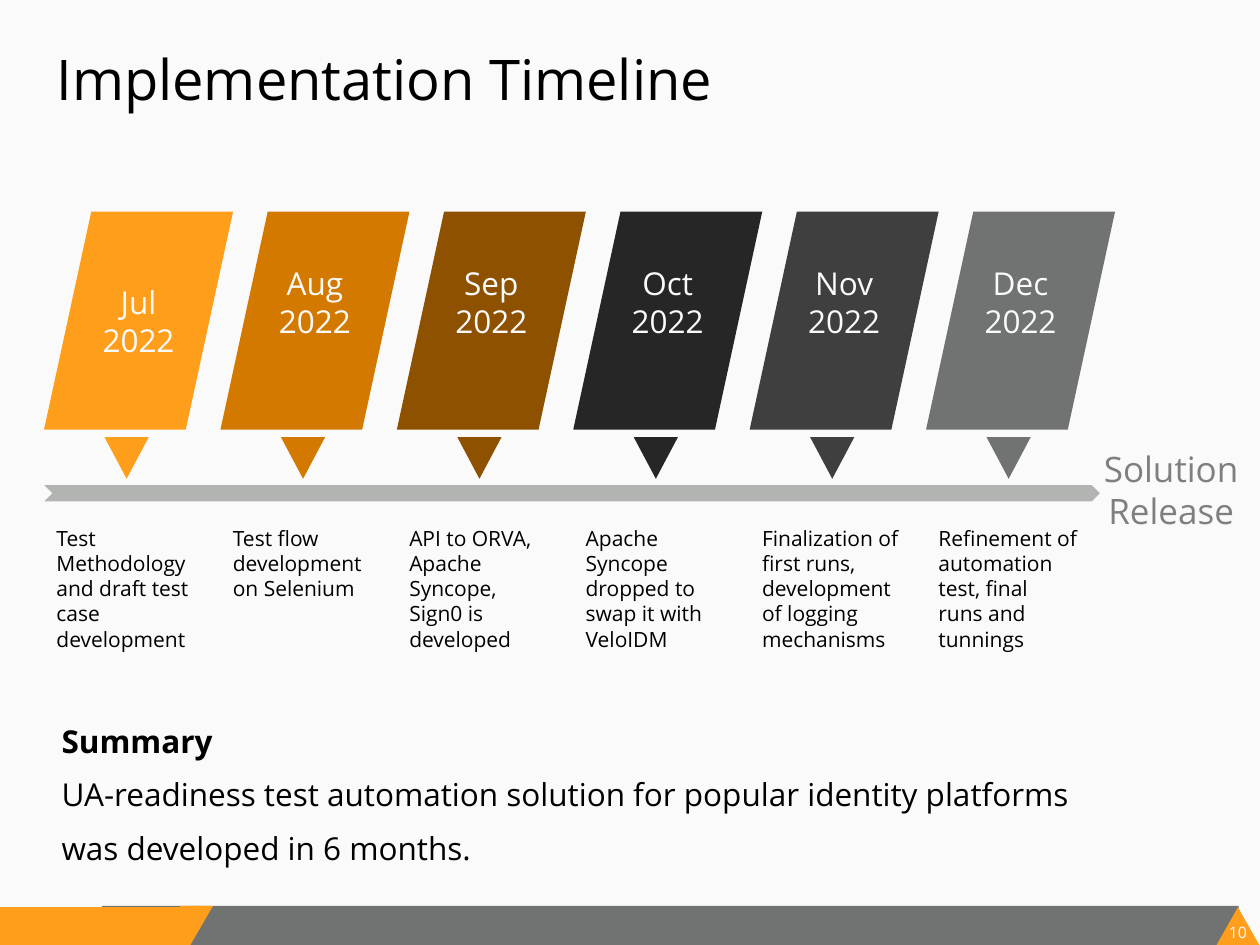
"""Build the implementation timeline slide."""
from dataclasses import dataclass

from pptx import Presentation, util as u
from pptx.dml.color import RGBColor
from pptx.enum import shapes, text


@dataclass(frozen=True)
class Theme:
    """Colours, type sizes and font of the slide."""
    font: str = "Open Sans"
    paper: str = "FAFAFA"
    ink: str = "000000"
    accent: str = "FF9E1B"
    grey: str = "707372"
    track: str = "B2B4B2"
    release: str = "7F7F7F"
    title: int = 32
    goal: int = 20
    body: int = 18
    note: int = 12
    page: int = 9


THEME = Theme()
LEFT, PITCH = 0.35, 1.4
SHAPE = shapes.MSO_SHAPE
CENTER = text.PP_ALIGN.CENTER
MILESTONES = [
    ("Jul", "FF9E1B", "Test Methodology and draft test case development"),
    ("Aug", "D37900", "Test flow development on Selenium"),
    ("Sep", "8D5100", "API to ORVA, Apache Syncope, Sign0 is developed"),
    ("Oct", "262626", "Apache Syncope dropped to swap it with VeloIDM"),
    ("Nov", "3F3F3F", "Finalization of first runs, development of logging mechanisms"),
    ("Dec", "707372", "Refinement of automation test, final runs and tunnings"),
]


def inches(*lengths):
    """Convert lengths in inches to slide units."""
    return [u.Inches(length) for length in lengths]


def write(frame, *paragraphs, size, color=THEME.ink, align=None, bold_first=False,
          spacing=None, anchor=text.MSO_ANCHOR.TOP, insets=(0.1, 0.05, 0.1, 0.05)):
    """Fill a text frame with uniformly formatted paragraphs."""
    frame.word_wrap = True
    frame.vertical_anchor = anchor
    (frame.margin_left, frame.margin_top,
     frame.margin_right, frame.margin_bottom) = inches(*insets)
    for index, content in enumerate(paragraphs):
        paragraph = frame.add_paragraph() if index else frame.paragraphs[0]
        paragraph.text = content
        paragraph.alignment = align
        paragraph.line_spacing = spacing
        for run in paragraph.runs:
            run.font.name = THEME.font
            run.font.size = u.Pt(size)
            run.font.bold = bold_first and index == 0
            run.font.color.rgb = RGBColor.from_string(color)


def label(slide, box, *paragraphs, **style):
    """Add a text box."""
    write(slide.shapes.add_textbox(*inches(*box)).text_frame, *paragraphs, **style)


def block(slide, kind, box, color, slant=None, turn=0):
    """Add a flat filled preset shape."""
    shape = slide.shapes.add_shape(kind, *inches(*box))
    shape.shadow.inherit = False
    shape.fill.solid()
    shape.fill.fore_color.rgb = RGBColor.from_string(color)
    shape.line.fill.background()
    shape.rotation = turn
    if slant is not None:
        shape.adjustments[0] = slant
    return shape


def footer(slide):
    """Draw the bottom band with its page number."""
    block(slide, SHAPE.RECTANGLE, (0.81, 7.19, 9.02, 0.31), THEME.grey)
    block(slide, SHAPE.RECTANGLE, (0, 7.2, 1.5, 0.31), THEME.accent)
    block(slide, SHAPE.ISOSCELES_TRIANGLE, (9.65, 7.2, 0.35, 0.31), THEME.accent)
    label(slide, (9.74, 7.32, 0.17, 0.15), "10", size=THEME.page,
          color=THEME.paper, align=CENTER, insets=(0, 0, 0, 0))
    block(slide, SHAPE.PARALLELOGRAM, (1.34, 7.19, 0.35, 0.31), THEME.accent, 0.58, 180)
    block(slide, SHAPE.RECTANGLE, (1.43, 7.19, 0.14, 0.13), THEME.accent)


def milestone(slide, column, month, color, note):
    """Draw one month with its pointer and note."""
    left = LEFT + column * PITCH
    card = block(slide, SHAPE.PARALLELOGRAM, (left, 1.68, 1.5, 1.73), color, 0.25)
    lift = 0.3 if column else 0
    write(card.text_frame, month, "2022", size=THEME.body, color=THEME.paper,
          align=CENTER, anchor=text.MSO_ANCHOR.MIDDLE,
          insets=(0.1, 0.05, 0.1, 0.05 + lift))
    block(slide, SHAPE.ISOSCELES_TRIANGLE, (left + 0.48, 3.47, 0.35, 0.33), color, turn=180)
    label(slide, (left, 4.12, 1.3, 1.2), note, size=THEME.note)


def main():
    """Assemble and save the slide."""
    deck = Presentation()
    deck.slide_width, deck.slide_height = inches(10, 7.5)
    slide = deck.slides.add_slide(deck.slide_layouts[6])
    slide.background.fill.solid()
    slide.background.fill.fore_color.rgb = RGBColor.from_string(THEME.paper)
    footer(slide)
    label(slide, (LEFT, 0.3, 9.24, 1.25), "Implementation Timeline", size=THEME.title)
    label(slide, (0.39, 5.56, 8.46, 1.38), "Summary",
          "UA-readiness test automation solution for popular identity platforms "
          "was developed in 6 months.",
          size=THEME.body, bold_first=True, spacing=1.41)
    block(slide, SHAPE.CHEVRON, (LEFT, 3.85, 8.38, 0.13), THEME.track, 0.5)
    label(slide, (8.65, 3.5, 1.29, 0.77), "Solution\vRelease", size=THEME.goal,
          color=THEME.release, align=CENTER)
    for column, details in enumerate(MILESTONES):
        milestone(slide, column, *details)
    deck.save("out.pptx")


if __name__ == "__main__":
    main()
